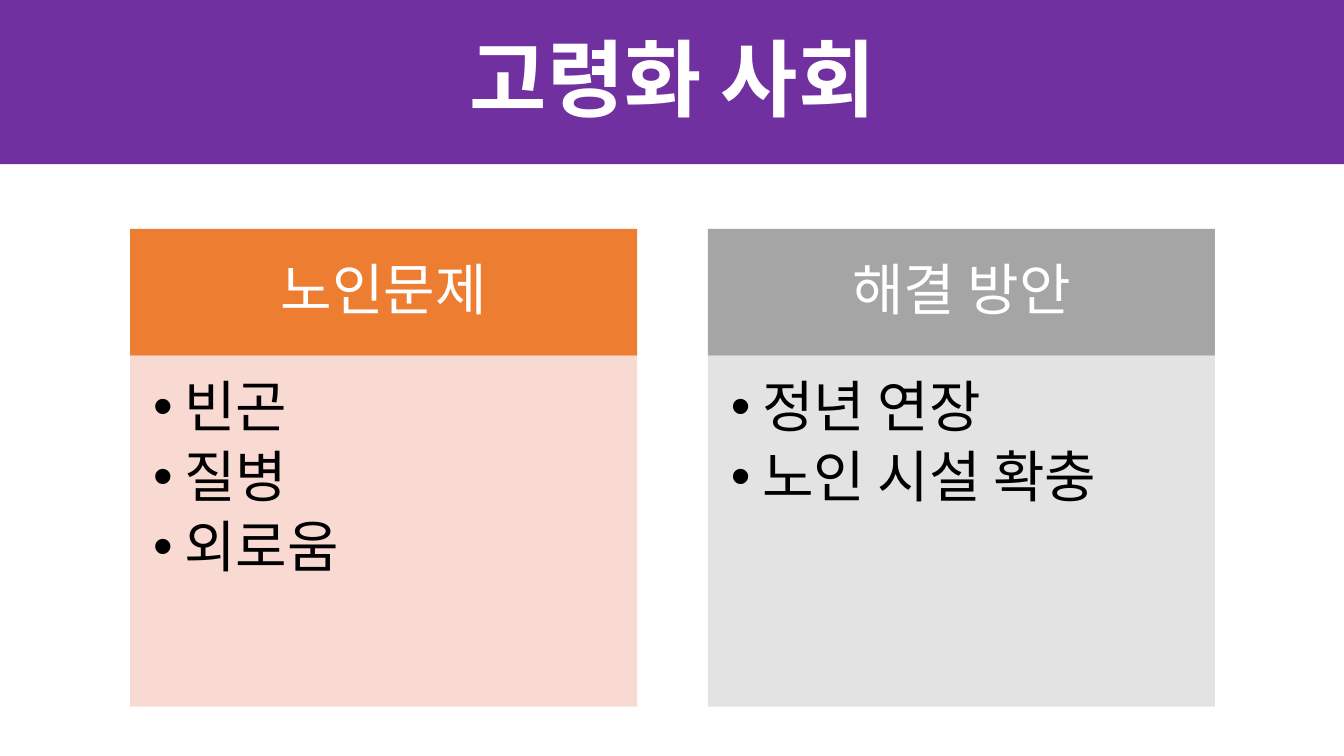
from lxml import etree
from pptx import Presentation
from pptx.dml.color import RGBColor
from pptx.enum.shapes import MSO_SHAPE
from pptx.enum.text import MSO_ANCHOR, PP_ALIGN
from pptx.oxml.ns import qn
from pptx.util import Inches, Pt

RECTANGLE = MSO_SHAPE.RECTANGLE
TOP, MIDDLE = MSO_ANCHOR.TOP, MSO_ANCHOR.MIDDLE
LEFT, CENTER = PP_ALIGN.LEFT, PP_ALIGN.CENTER

TITLE = "고령화 사회"
COLUMNS = [
    ("노인문제", ["빈곤", "질병", "외로움"], "orange", "pale_orange"),
    ("해결 방안", ["정년 연장", "노인 시설 확충"], "gray", "pale_gray"),
]
COLORS = {
    "purple": "7030A0",
    "orange": "ED7D31",
    "pale_orange": "F8D7CE",
    "gray": "A5A5A5",
    "pale_gray": "E1E1E1",
    "white": "FFFFFF",
    "black": "000000",
}
FONT = "Noto Sans CJK KR"

SLIDE_WIDTH, SLIDE_HEIGHT = 13.33, 7.5
BANNER_HEIGHT = 1.63
COLUMN_LEFT, COLUMN_STEP, COLUMN_WIDTH = 1.29, 5.73, 5.03
HEADER_TOP, HEADER_HEIGHT, BODY_HEIGHT = 2.27, 1.26, 3.48
BULLET_INDENT = 0.31
HEADER_INSETS = (0.31, 0.18, 0.31, 0.18)
BODY_INSETS = (0.23, 0.23, 0.31, 0.35)
TITLE_INSETS = (0.1, 0.05, 0.1, 0.05)


def add_panel(slide, left, top, width, height, color, opacity=100):
    panel = slide.shapes.add_shape(
        RECTANGLE, Inches(left), Inches(top), Inches(width), Inches(height))
    panel.shadow.inherit = False
    panel.line.fill.background()
    panel.fill.solid()
    panel.fill.fore_color.rgb = RGBColor.from_string(COLORS[color])
    if opacity < 100:
        fill_color = panel._element.spPr.find(qn("a:solidFill"))[0]
        etree.SubElement(fill_color, qn("a:alpha"), val=str(opacity * 1000))
    return panel


def add_bullet(paragraph):
    properties = paragraph._p.get_or_add_pPr()
    properties.set("marL", str(Inches(BULLET_INDENT)))
    properties.set("indent", str(-Inches(BULLET_INDENT)))
    etree.SubElement(properties, qn("a:buFont"), typeface="Arial")
    etree.SubElement(properties, qn("a:buChar"), char="•")


def write_text(box, lines, size, color, insets, anchor=MIDDLE, align=CENTER,
               bold=False, bulleted=False, space_after=0):
    frame = box.text_frame
    frame.word_wrap = True
    frame.vertical_anchor = anchor
    (frame.margin_left, frame.margin_top,
     frame.margin_right, frame.margin_bottom) = map(Inches, insets)
    frame.text = "\n".join(lines)
    for paragraph in frame.paragraphs:
        if bulleted:
            add_bullet(paragraph)
        paragraph.alignment = align
        paragraph.line_spacing = 0.9
        paragraph.space_after = Pt(space_after)
        font = paragraph.font
        font.name = FONT
        font.size = Pt(size)
        font.bold = bold
        font.color.rgb = RGBColor.from_string(COLORS[color])
        for span in paragraph.runs:
            east_asian = etree.SubElement(span._r.get_or_add_rPr(), qn("a:ea"))
            east_asian.set("typeface", FONT)


def main():
    deck = Presentation()
    deck.slide_width = Inches(SLIDE_WIDTH)
    deck.slide_height = Inches(SLIDE_HEIGHT)
    slide = deck.slides.add_slide(deck.slide_layouts[6])

    add_panel(slide, 0, 0, SLIDE_WIDTH, BANNER_HEIGHT, "purple")
    title = slide.shapes.add_textbox(
        Inches(0.92), Inches(0.1), Inches(11.5), Inches(1.45))
    write_text(title, [TITLE], 60, "white", TITLE_INSETS, bold=True)

    for index, (heading, items, header_color, body_color) in enumerate(COLUMNS):
        left = COLUMN_LEFT + index * COLUMN_STEP
        header = add_panel(slide, left, HEADER_TOP, COLUMN_WIDTH,
                           HEADER_HEIGHT, header_color)
        write_text(header, [heading], 40, "white", HEADER_INSETS)
        body = add_panel(slide, left, HEADER_TOP + HEADER_HEIGHT, COLUMN_WIDTH,
                         BODY_HEIGHT, body_color, opacity=90)
        write_text(body, items, 40, "black", BODY_INSETS, anchor=TOP,
                   align=LEFT, bulleted=True, space_after=7)

    deck.save("out.pptx")


if __name__ == "__main__":
    main()
